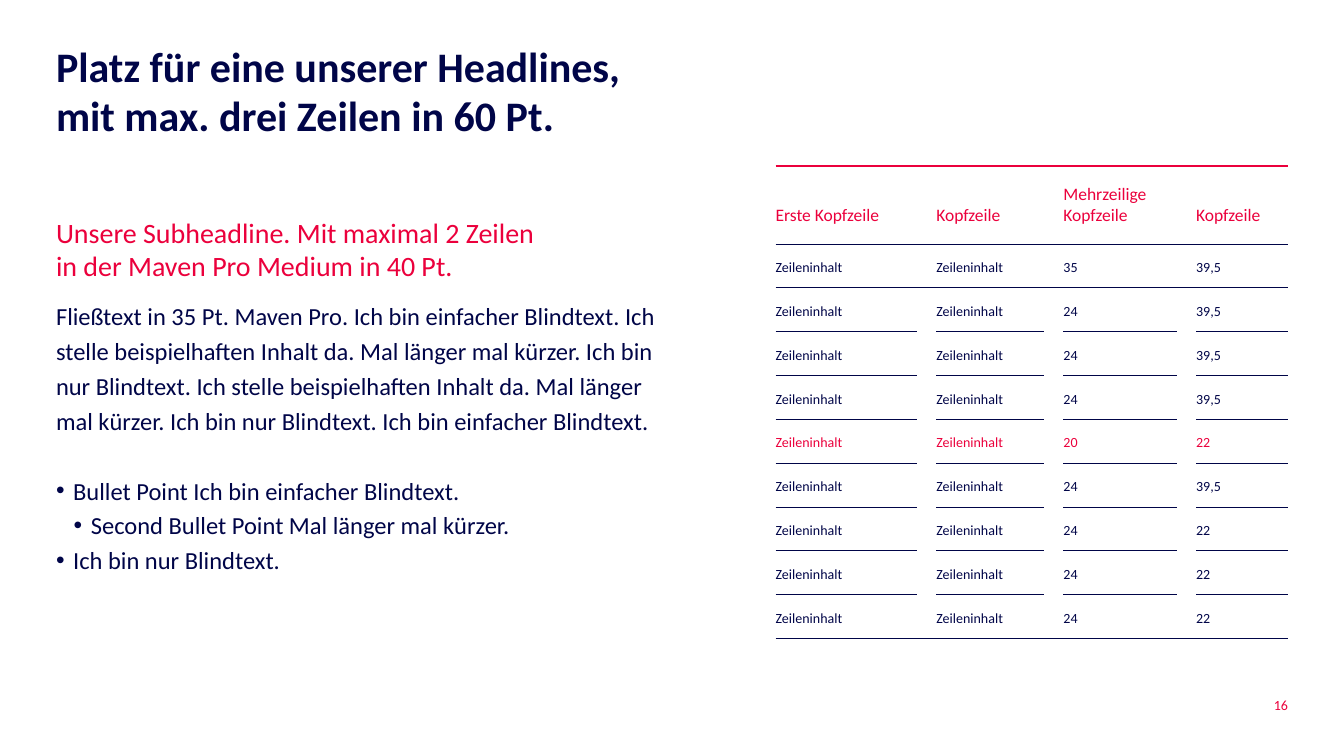
"""Build a slide with a headline, a bulleted text column and a ruled table."""
import pptx
import pptx.dml.color
import pptx.enum.text
import pptx.oxml
import pptx.oxml.ns
import pptx.util

NAVY, RED = "000548", "EB003C"
ALIGN = pptx.enum.text.PP_ALIGN
ANCHOR = pptx.enum.text.MSO_ANCHOR

deck = pptx.Presentation()
deck.slide_width = pptx.util.Inches(26.66)
deck.slide_height = pptx.util.Inches(15)
COL, ROW = deck.slide_width / 24, deck.slide_height / 15
slide = deck.slides.add_slide(deck.slide_layouts[1])


def write(paragraph, text, size=35, color=NAVY, bold=False, align=ALIGN.LEFT,
          spacing=None, before=0, after=0, level=0, bullet=None, indent=0):
    """Fill one paragraph with formatted text, breaking lines at newlines."""
    paragraph.alignment, paragraph.level = align, level
    paragraph.space_before = pptx.util.Pt(before)
    paragraph.space_after = pptx.util.Pt(after)
    if spacing:
        paragraph.line_spacing = spacing
    properties = paragraph._p.get_or_add_pPr()
    hang = int(pptx.util.Inches(0.34)) if bullet else 0
    properties.set("marL", str(int(pptx.util.Inches(indent))))
    properties.set("indent", str(-hang))
    mark = f'buChar {{}} char="{bullet}"' if bullet else "buNone {}"
    properties.append(pptx.oxml.parse_xml(
        f"<a:{mark.format(pptx.oxml.ns.nsdecls('a'))}/>"))
    for number, line in enumerate(text.split("\n")):
        if number:
            paragraph.add_line_break()
        run = paragraph.add_run()
        run.text = line
        run.font.name, run.font.size, run.font.bold = "Calibri", pptx.util.Pt(size), bold
        run.font.color.rgb = pptx.dml.color.RGBColor.from_string(color)


def rule(cell, side, color, width):
    """Draw one border of a table cell; side is T or B."""
    cell._tc.get_or_add_tcPr().append(pptx.oxml.parse_xml(
        f'<a:ln{side} {pptx.oxml.ns.nsdecls("a")} w="{int(pptx.util.Pt(width))}">'
        f'<a:solidFill><a:srgbClr val="{color}"/></a:solidFill></a:ln{side}>'))


headline, body = slide.shapes.title, slide.placeholders[1]
page = slide.shapes.add_textbox(0, 0, 0, 0)
for area, left, top, width, height in (
        (headline, 1, 0.87, 11, 3), (body, 1, 4.27, 11, 9.14), (page, 21.94, 13.81, 1.06, 0.47)):
    area.left, area.width = int(left * COL), int(width * COL)
    area.top, area.height = int(top * ROW), int(height * ROW)
    frame = area.text_frame
    frame.word_wrap = True
    frame.auto_size = pptx.enum.text.MSO_AUTO_SIZE.NONE
    frame.vertical_anchor = ANCHOR.TOP
    frame.margin_left = frame.margin_right = frame.margin_top = frame.margin_bottom = 0

write(headline.text_frame.paragraphs[0],
      "Platz für eine unserer Headlines, mit max. drei Zeilen in 60 Pt.",
      size=60, bold=True, spacing=0.97)
write(page.text_frame.paragraphs[0], "16", size=20, color=RED, align=ALIGN.RIGHT)

write(body.text_frame.paragraphs[0],
      "Unsere Subheadline. Mit maximal 2 Zeilen \nin der Maven Pro Medium in 40 Pt.",
      size=40, color=RED, after=18)
write(body.text_frame.add_paragraph(),
      "Fließtext in 35 Pt. Maven Pro. Ich bin einfacher Blindtext. Ich stelle "
      "beispielhaften Inhalt da. Mal länger mal kürzer. Ich bin nur Blindtext. "
      "Ich stelle beispielhaften Inhalt da. Mal länger mal kürzer. Ich bin nur "
      "Blindtext. Ich bin einfacher Blindtext.", spacing=1.19, level=1)
for point, level, indent, before in (
        ("Bullet Point Ich bin einfacher Blindtext.", 2, 0.34, 50),
        ("Second Bullet Point Mal länger mal kürzer.", 3, 0.69, 0),
        ("Ich bin nur Blindtext.", 2, 0.34, 0)):
    write(body.text_frame.add_paragraph(), point, spacing=1.19, before=before,
          level=level, bullet="•", indent=indent)

headings = ["Erste Kopfzeile", "Kopfzeile", "Mehrzeilige\nKopfzeile", "Kopfzeile"]
figures = [("35", "39,5")] + [("24", "39,5")] * 3 + [("20", "22"), ("24", "39,5")] + [("24", "22")] * 3
rows = [headings] + [["Zeileninhalt", "Zeileninhalt", *pair] for pair in figures]
HIGHLIGHT, LAST = 5, len(rows) - 1
GAP = 0.35
widths = [2.52, GAP, 1.92, GAP, 2.02, GAP, 1.64]
heights = [1.54] + [0.87] * LAST

table_frame = slide.shapes.add_table(
    len(rows), len(widths), int(13.85 * COL), int(3.3 * ROW),
    int(sum(widths) * COL), int(sum(heights) * ROW))
table = table_frame.table
table.first_row = table.horz_banding = False
table._tbl.tblPr.find(pptx.oxml.ns.qn("a:tableStyleId")).text = "{2D5ABB26-0587-4C30-8999-92F81FD0307C}"
for column, width in zip(table.columns, widths):
    column.width = int(width * COL)

for r, (values, height) in enumerate(zip(rows, heights)):
    table.rows[r].height = int(height * ROW)
    for c in range(len(widths)):
        cell, is_gap = table.cell(r, c), c % 2 == 1
        if r == 0:
            rule(cell, "T", RED, 3)
        elif r == 1 or not is_gap:
            rule(cell, "T", NAVY, 1)
        if r in (0, LAST) or not is_gap:
            rule(cell, "B", NAVY, 1)
        cell.fill.background()
        if is_gap:
            continue
        cell.margin_left = cell.margin_right = 0
        cell.margin_top = pptx.util.Inches(0.16 if r else 0.24)
        cell.margin_bottom = pptx.util.Inches(0.08 if r else 0.35)
        cell.vertical_anchor = ANCHOR.MIDDLE if r else ANCHOR.BOTTOM
        for number, line in enumerate(values[c // 2].split("\n")):
            paragraph = cell.text_frame.add_paragraph() if number else cell.text_frame.paragraphs[0]
            write(paragraph, line, size=20 if r else 25,
                  color=RED if r in (0, HIGHLIGHT) else NAVY)

deck.save("out.pptx")
